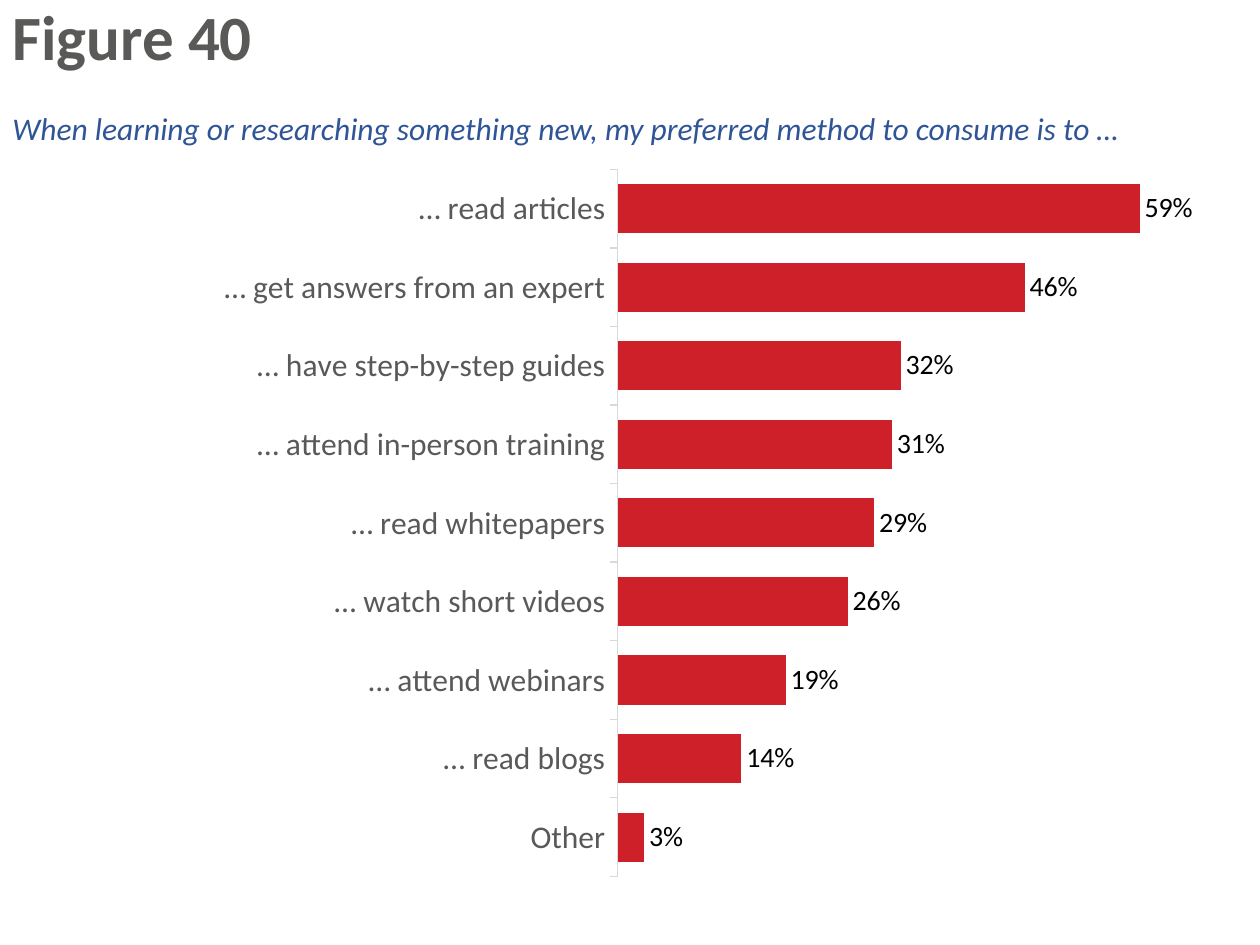
from lxml import etree
from pptx import Presentation
from pptx.chart.data import CategoryChartData
from pptx.dml.color import RGBColor
from pptx.enum.chart import XL_CHART_TYPE, XL_LABEL_POSITION, XL_TICK_LABEL_POSITION, XL_TICK_MARK
from pptx.enum.text import MSO_ANCHOR, MSO_AUTO_SIZE, PP_ALIGN
from pptx.oxml.ns import qn
from pptx.util import Emu, Pt

BAR = XL_CHART_TYPE.BAR_CLUSTERED
OUTSIDE_END = XL_LABEL_POSITION.OUTSIDE_END
NO_LABELS = XL_TICK_LABEL_POSITION.NONE
TICK_OUT = XL_TICK_MARK.OUTSIDE
MIDDLE = MSO_ANCHOR.MIDDLE
FIXED = MSO_AUTO_SIZE.NONE
GROW = MSO_AUTO_SIZE.SHAPE_TO_FIT_TEXT
LEFT = PP_ALIGN.LEFT

BLACK = RGBColor(0x00, 0x00, 0x00)
TITLE_GRAY = RGBColor(0x59, 0x59, 0x58)
LABEL_GRAY = RGBColor(0x59, 0x59, 0x59)
AXIS_GRAY = RGBColor(0xD9, 0xD9, 0xD9)
RED = RGBColor(0xCE, 0x20, 0x29)
BLUE = RGBColor(0x2F, 0x55, 0x97)

EMU_PER_INCH = 914400
PX_PER_INCH = 126

ANSWERS = {
    "… read articles": 0.59,
    "… get answers from an expert": 0.46,
    "… have step-by-step guides": 0.32,
    "… attend in-person training": 0.31,
    "… read whitepapers": 0.29,
    "… watch short videos": 0.26,
    "… attend webinars": 0.19,
    "… read blogs": 0.14,
    "Other": 0.03,
}
PLOT_AREA = {"x": 0.506, "y": 0.013, "w": 0.481, "h": 0.974}


def px(length):
    return Emu(round(length * EMU_PER_INCH / PX_PER_INCH))


class SurveyPage:
    def __init__(self, deck, font_name):
        self.font_name = font_name
        self.page = deck.slides.add_slide(deck.slide_layouts[5])

    def style(self, font, size, color, **format_values):
        values = {"name": self.font_name, "size": Pt(size), **format_values}
        for name, value in values.items():
            setattr(font, name, value)
        font.color.rgb = color

    def add_text(self, frame, text, size, color, **format_values):
        para = frame.paragraphs[0]
        para.alignment = LEFT
        span = para.add_run()
        span.text = text
        self.style(span.font, size, color, **format_values)
        return para

    def title(self, text, left, top, width, height):
        box = self.page.shapes.title
        bounds = {"left": left, "top": top, "width": width, "height": height}
        for name, value in bounds.items():
            setattr(box, name, px(value))
        frame = box.text_frame
        frame.auto_size = FIXED
        frame.vertical_anchor = MIDDLE
        para = self.add_text(frame, text, 36, TITLE_GRAY, bold=True)
        para.line_spacing = 0.9

    def question(self, text, *bounds):
        box = self.page.shapes.add_textbox(*map(px, bounds))
        frame = box.text_frame
        frame.word_wrap = False
        frame.auto_size = GROW
        self.add_text(frame, text, 18, BLUE, italic=True)

    def bar_chart(self, answers, *bounds):
        data = CategoryChartData(number_format="0%")
        data.categories = list(answers)
        data.add_series("Series 1", list(answers.values()))
        chart = self.page.shapes.add_chart(BAR, *map(px, bounds), data).chart
        chart.has_legend = False
        chart.has_title = False
        self.style(chart.font, 10, BLACK)
        self.format_axes(chart)
        self.format_bars(chart.plots[0])
        self.place_plot(chart)

    def format_axes(self, chart):
        categories, values = chart.category_axis, chart.value_axis
        for axis, size in ((categories, 18), (values, 12)):
            axis.has_major_gridlines = False
            axis.major_tick_mark = TICK_OUT
            self.style(axis.tick_labels.font, size, LABEL_GRAY)
        categories.reverse_order = True
        categories.format.line.color.rgb = AXIS_GRAY
        categories.format.line.width = Pt(0.75)
        values.minimum_scale = 0
        values.maximum_scale = 0.7
        values.tick_label_position = NO_LABELS
        values.format.line.fill.background()

    def format_bars(self, plot):
        plot.gap_width = 60
        plot.vary_by_categories = False
        bars = plot.series[0]
        bars.format.fill.solid()
        bars.format.fill.fore_color.rgb = RED
        labels = bars.data_labels
        label_format = {
            "show_value": True,
            "number_format": "0%",
            "number_format_is_linked": False,
            "position": OUTSIDE_END,
        }
        for name, value in label_format.items():
            setattr(labels, name, value)
        self.style(labels.font, 16, BLACK)

    def place_plot(self, chart):
        plot_area = chart.plots[0]._element.getparent()
        for layout in plot_area.findall(qn("c:layout")):
            plot_area.remove(layout)
        layout = etree.Element(qn("c:layout"))
        plot_area.insert(0, layout)
        manual = etree.SubElement(layout, qn("c:manualLayout"))
        settings = {"layoutTarget": "inner", "xMode": "edge", "yMode": "edge", **PLOT_AREA}
        for name, value in settings.items():
            etree.SubElement(manual, qn(f"c:{name}"), val=str(value))


def main():
    deck = Presentation()
    deck.slide_width = px(1260)
    deck.slide_height = px(945)
    survey = SurveyPage(deck, "Calibri")
    survey.title("Figure 40", 0, 0, 1260, 81)
    survey.bar_chart(ANSWERS, -34, 160, 1288, 726)
    survey.question(
        "When learning or researching something new, my preferred method to consume is to …",
        0, 103, 1152, 50,
    )
    deck.save("out.pptx")


if __name__ == "__main__":
    main()
